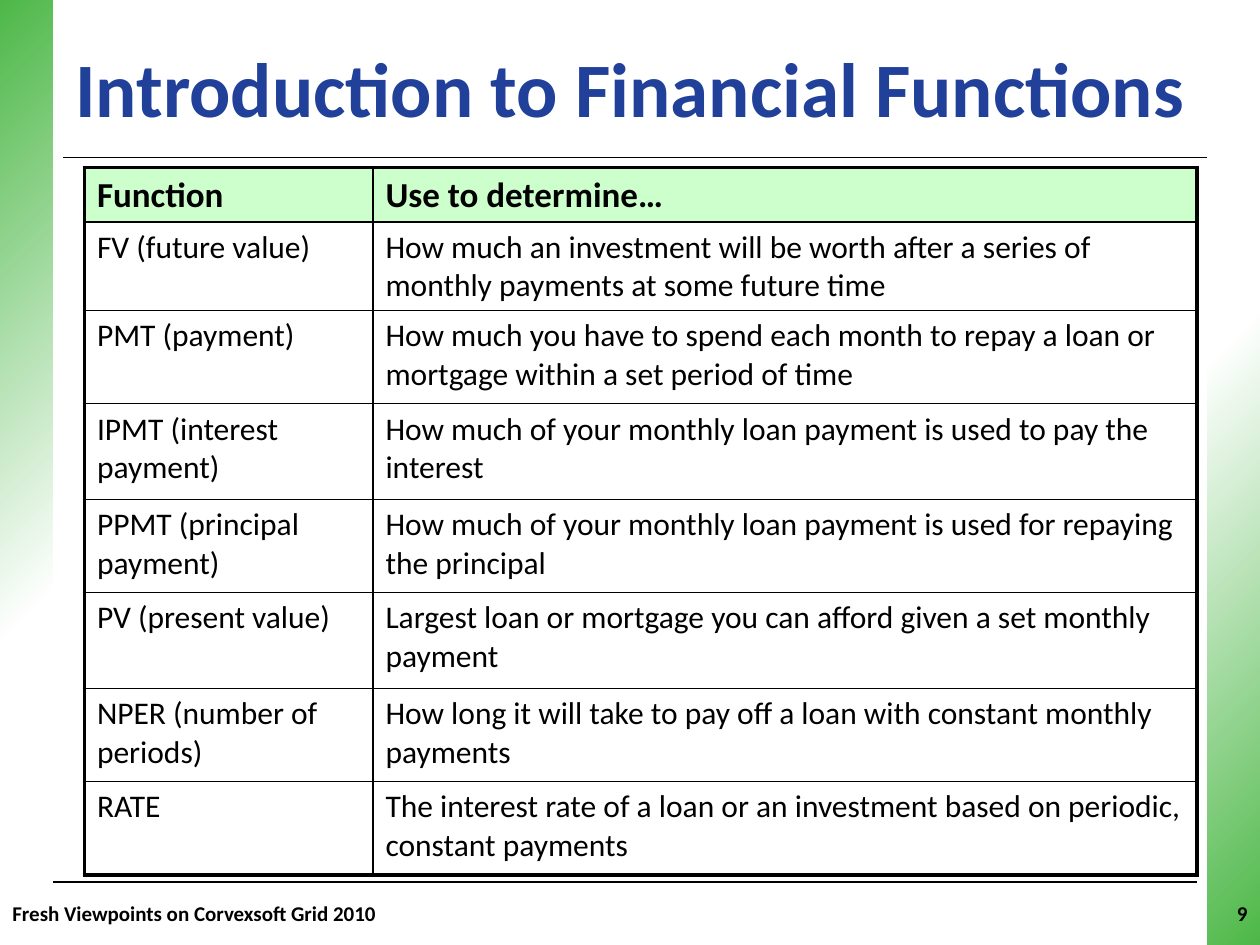
from lxml.etree import SubElement
from pptx import Presentation
from pptx.dml.color import RGBColor
from pptx.enum.shapes import MSO_CONNECTOR as Connector, MSO_SHAPE as Shape
from pptx.enum.text import MSO_ANCHOR as Anchor, PP_ALIGN as Align
from pptx.oxml.ns import qn
from pptx.util import Inches, Pt

COLORS = {"ink": "000000", "title": "20409A", "header": "CCFFCC",
          "green": "4DB848", "white": "FFFFFF"}
ROWS = [
    ("Function", "Use to determine…"),
    ("FV (future value)", "How much an investment will be worth after a series of "
     "monthly payments at some future time"),
    ("PMT (payment)", "How much you have to spend each month to repay a loan or "
     "mortgage within a set period of time"),
    ("IPMT (interest payment)",
     "How much of your monthly loan payment is used to pay the interest"),
    ("PPMT (principal payment)",
     "How much of your monthly loan payment is used for repaying the principal"),
    ("PV (present value)",
     "Largest loan or mortgage you can afford given a set monthly payment"),
    ("NPER (number of periods)",
     "How long it will take to pay off a loan with constant monthly payments"),
    ("RATE", "The interest rate of a loan or an investment based on periodic, "
     "constant payments"),
]
COLUMN_WIDTHS = [2.29, 6.54]
ROW_HEIGHTS = [0.43, 0.69, 0.74, 0.76, 0.74, 0.76, 0.74, 0.74]


class SlideBuilder:
    """Holds the style and the current slide, and draws each kind of element."""

    def __init__(self, slide, font="Calibri"):
        self.slide = slide
        self.font = font

    def color(self, name):
        return RGBColor.from_string(COLORS[name])

    def set_text(self, frame, words, size, bold=True, color="ink", align=Align.LEFT):
        paragraph = frame.paragraphs[0]
        paragraph.text = words
        paragraph.alignment = align
        paragraph.font.name = self.font
        paragraph.font.size = Pt(size)
        paragraph.font.bold = bold
        paragraph.font.color.rgb = self.color(color)

    def text(self, box, words, size, **style):
        frame = self.slide.shapes.add_textbox(*map(Inches, box)).text_frame
        frame.word_wrap = True
        frame.vertical_anchor = Anchor.MIDDLE
        self.set_text(frame, words, size, **style)

    def rule(self, left, right, y):
        line = self.slide.shapes.add_connector(
            Connector.STRAIGHT, Inches(left), Inches(y), Inches(right), Inches(y))
        line.line.color.rgb = self.color("ink")
        line.line.width = Pt(0.75)
        SubElement(line._element.spPr, qn("a:effectLst"))

    def band(self, left, stops):
        band = self.slide.shapes.add_shape(
            Shape.RECTANGLE, Inches(left), 0, Inches(0.42), Inches(7.5))
        band.shadow.inherit = False
        band.line.fill.background()
        band.fill.gradient()
        band.fill.gradient_angle = 315
        for stop, (position, name) in zip(band.fill.gradient_stops, stops):
            stop.position = position
            stop.color.rgb = self.color(name)

    def borders(self, cell, outer_sides):
        properties = cell._tc.get_or_add_tcPr()
        for side in "LRTB":
            width = Pt(2.25 if side in outer_sides else 1)
            line = SubElement(properties, qn(f"a:ln{side}"), w=str(width))
            fill = SubElement(line, qn("a:solidFill"))
            SubElement(fill, qn("a:srgbClr"), val=COLORS["ink"])

    def table(self, left, top, rows, widths, heights):
        table = self.slide.shapes.add_table(
            len(rows), len(widths), Inches(left), Inches(top),
            Inches(sum(widths)), Inches(sum(heights))).table
        table.first_row = table.horz_banding = False
        for column, width in zip(table.columns, widths):
            column.width = Inches(width)
        for r, (entries, height) in enumerate(zip(rows, heights)):
            table.rows[r].height = Inches(height)
            header = r == 0
            vertical = "T" if header else "B" if r == len(rows) - 1 else ""
            for c, words in enumerate(entries):
                cell = table.cell(r, c)
                self.borders(cell, vertical + "LR"[c])
                if header:
                    cell.fill.solid()
                    cell.fill.fore_color.rgb = self.color("header")
                else:
                    cell.fill.background()
                self.set_text(cell.text_frame, words, 20 if header else 18, bold=header)


def main():
    deck = Presentation()
    deck.slide_width, deck.slide_height = Inches(10), Inches(7.5)
    builder = SlideBuilder(deck.slides.add_slide(deck.slide_layouts[6]))
    builder.rule(0.5, 10, 1.25)
    builder.rule(0, 9.5, 7)
    builder.band(0, [(0, "green"), (0.65, "white")])
    builder.band(9.58, [(0.36, "white"), (1, "green")])
    builder.text((0, 7, 9, 0.5), "Fresh Viewpoints on Corvexsoft Grid 2010", 12)
    builder.text((9.42, 7, 0.58, 0.5), "9", 12, align=Align.RIGHT)
    builder.text((0.5, 0.17, 9.08, 1.03), "Introduction to Financial Functions", 44,
                 color="title")
    builder.table(0.67, 1.33, ROWS, COLUMN_WIDTHS, ROW_HEIGHTS)
    deck.save("out.pptx")


if __name__ == "__main__":
    main()
